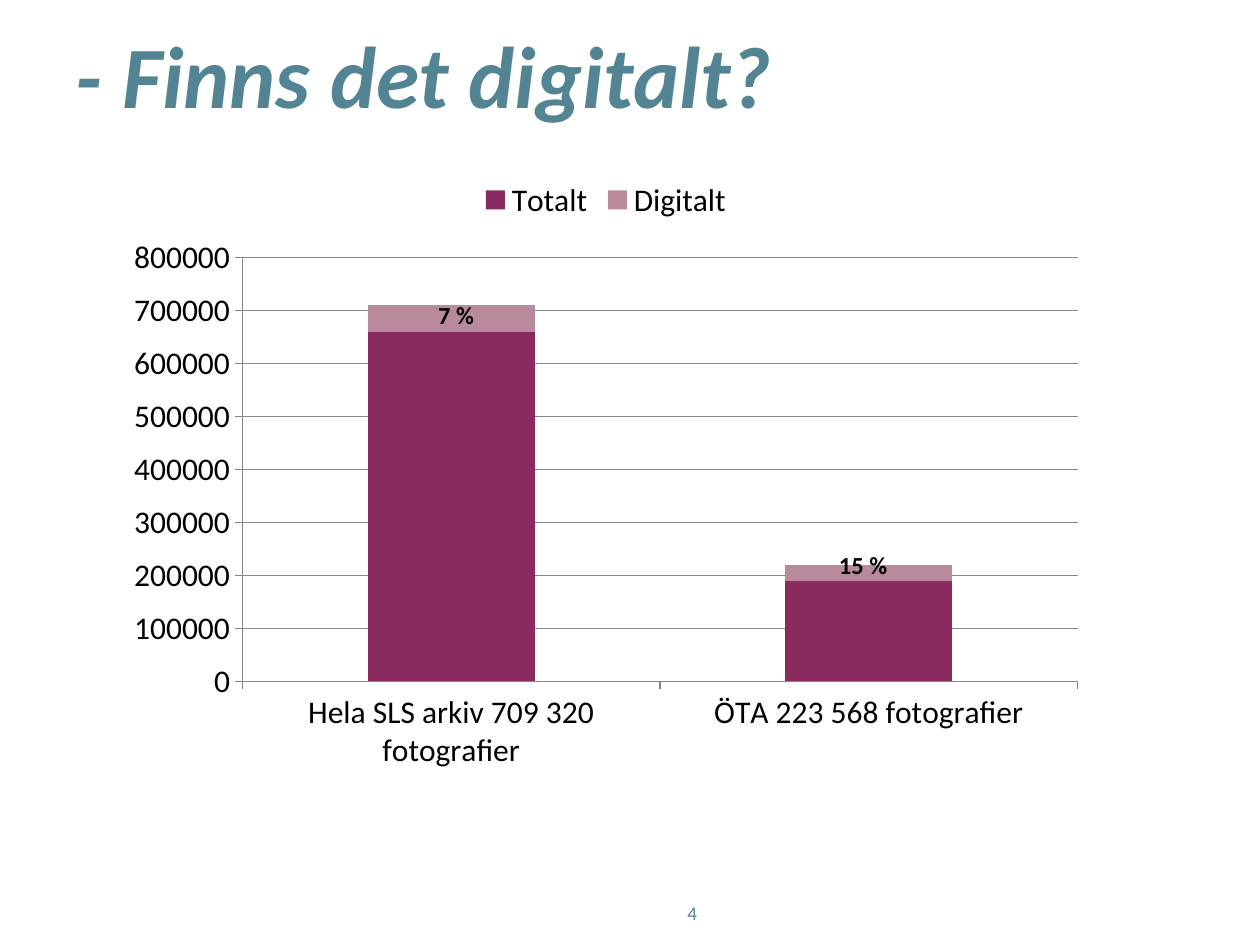
from dataclasses import dataclass

from lxml import etree
from pptx import Presentation
from pptx import util as u
from pptx.chart.data import CategoryChartData
from pptx.dml.color import RGBColor
from pptx.enum import chart as charts, text
from pptx.oxml.ns import qn


@dataclass(frozen=True)
class Theme:
    """Colours, font and type sizes of the deck."""
    font: str = "Calibri"
    accent: str = "538494"
    ink: str = "000000"
    rule: str = "878787"
    total: str = "8A2B5F"
    digital: str = "B98A9D"
    title: int = 50
    title_line: int = 52
    chart: int = 18
    label: int = 14
    number: int = 11


class Slide:
    """Places styled elements on one page by shares of its size."""

    def __init__(self, deck, theme):
        """Add a title-only page."""
        self.deck, self.theme = deck, theme
        self.page = deck.slides.add_slide(deck.slide_layouts[5])

    def area(self, left, top, width, height):
        """Turn shares of the page into lengths."""
        wide, high = self.deck.slide_width, self.deck.slide_height
        return [u.Emu(round(share * side)) for share, side in
                zip((left, top, width, height), (wide, high, wide, high))]

    def style(self, font, size, color, bold=False, italic=False):
        """Format a font."""
        font.name, font.size = self.theme.font, u.Pt(size)
        font.bold, font.italic = bold, italic
        font.color.rgb = RGBColor.from_string(color)

    def title(self, words, *shares):
        """Fill and move the title placeholder."""
        box = self.page.shapes.title
        box.left, box.top, box.width, box.height = self.area(*shares)
        frame = box.text_frame
        frame.text = words
        frame.auto_size = text.MSO_AUTO_SIZE.NONE
        frame.vertical_anchor = text.MSO_ANCHOR.TOP
        para = frame.paragraphs[0]
        para.alignment = text.PP_ALIGN.LEFT
        para.line_spacing = u.Pt(self.theme.title_line)
        self.style(para.runs[0].font, self.theme.title, self.theme.accent, True, True)

    def label(self, words, size, color, *shares, bold=False, anchor=text.MSO_ANCHOR.TOP):
        """Add a centred line of text."""
        frame = self.page.shapes.add_textbox(*self.area(*shares)).text_frame
        frame.word_wrap = True
        frame.vertical_anchor = anchor
        frame.text = words
        para = frame.paragraphs[0]
        para.alignment = text.PP_ALIGN.CENTER
        self.style(para.runs[0].font, size, color, bold)

    def stacked_columns(self, categories, series, plot, *shares):
        """Add a stacked column chart with a legend on top."""
        data = CategoryChartData()
        data.categories = categories
        for name, values, _ in series:
            data.add_series(name, values)
        chart = self.page.shapes.add_chart(
            charts.XL_CHART_TYPE.COLUMN_STACKED, *self.area(*shares), data).chart
        self.style(chart.font, self.theme.chart, self.theme.ink)
        chart.has_title = False
        chart.has_legend = True
        chart.legend.position = charts.XL_LEGEND_POSITION.TOP
        chart.legend.include_in_layout = False
        bars = chart.plots[0]
        bars.gap_width, bars.overlap, bars.vary_by_categories = 150, 100, False
        for item, (_, _, color) in zip(bars.series, series):
            item.format.fill.solid()
            item.format.fill.fore_color.rgb = RGBColor.from_string(color)
        chart.value_axis.minimum_scale = 0
        chart.value_axis.maximum_scale = 800000
        chart.value_axis.major_unit = 100000
        chart.value_axis.has_major_gridlines = True
        rule = RGBColor.from_string(self.theme.rule)
        for axis in (chart.category_axis, chart.value_axis):
            axis.major_tick_mark = charts.XL_TICK_MARK.OUTSIDE
            axis.format.line.color.rgb = rule
        chart.value_axis.major_gridlines.format.line.color.rgb = rule
        self.fix_plot(chart, plot)

    def fix_plot(self, chart, plot):
        """Set the inner plot area by shares of the chart."""
        area = chart.plots[0]._element.getparent()
        for old in area.findall(qn("c:layout")):
            area.remove(old)
        layout = etree.Element(qn("c:layout"))
        area.insert(0, layout)
        manual = etree.SubElement(layout, qn("c:manualLayout"))
        settings = [("layoutTarget", "inner"), ("xMode", "edge"), ("yMode", "edge"),
                    *zip("xywh", plot)]
        for tag, value in settings:
            etree.SubElement(manual, qn(f"c:{tag}")).set("val", str(value))


def main():
    """Build and save the deck."""
    theme = Theme()
    deck = Presentation()
    deck.slide_width, deck.slide_height = u.Inches(10), u.Inches(7.5)
    slide = Slide(deck, theme)
    slide.title("- Finns det digitalt?", 0.05, 0.03, 0.9, 0.21)
    slide.stacked_columns(
        ["Hela SLS arkiv 709 320 fotografier", "ÖTA 223 568 fotografier"],
        [("Totalt", (660000, 190000), theme.total),
         ("Digitalt", (50000, 30000), theme.digital)],
        (0.13, 0.15, 0.85, 0.69), 0.091, 0.175, 0.78, 0.65)
    for words, left, top in (("7 %", 0.295, 0.311), ("15 %", 0.618, 0.575)):
        slide.label(words, theme.label, theme.ink, left, top, 0.134, 0.045, bold=True)
    slide.label("4", theme.number, theme.accent, 0.528, 0.94, 0.043, 0.052,
                anchor=text.MSO_ANCHOR.MIDDLE)
    deck.save("out.pptx")


if __name__ == "__main__":
    main()
